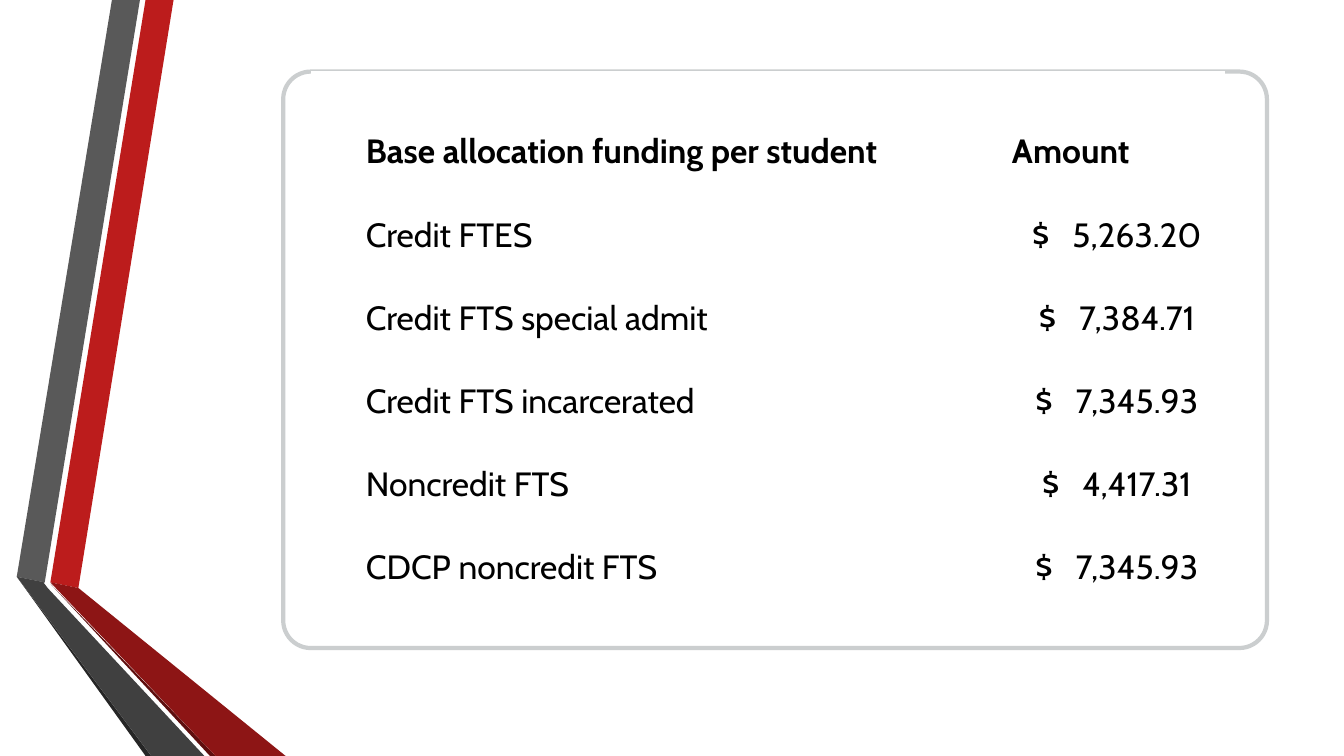
from pptx import Presentation
from pptx.dml.color import RGBColor
from pptx.enum.shapes import MSO_SHAPE
from pptx.enum.text import MSO_ANCHOR, PP_ALIGN
from pptx.util import Pt

ROUND = MSO_SHAPE.ROUNDED_RECTANGLE
BOTTOM = MSO_ANCHOR.BOTTOM
LEFT, CENTER = PP_ALIGN.LEFT, PP_ALIGN.CENTER

BLACK = RGBColor(0x00, 0x00, 0x00)
WHITE = RGBColor(0xFF, 0xFF, 0xFF)
SILVER = RGBColor(0xCB, 0xCE, 0xCF)
RED = RGBColor(0xBC, 0x1C, 0x1C)
DARK_RED = RGBColor(0x8D, 0x15, 0x15)
DEEP_RED = RGBColor(0x5E, 0x0E, 0x0E)
GRAY = RGBColor(0x59, 0x59, 0x59)
DARK_GRAY = RGBColor(0x40, 0x40, 0x40)
DEEP_GRAY = RGBColor(0x26, 0x26, 0x26)

# Content
HEAD = ("Base allocation funding per student", "Amount")
FUNDS = [
    ("Credit FTES", "5,263.20"),
    ("Credit FTS special admit", "7,384.71"),
    ("Credit FTS incarcerated", "7,345.93"),
    ("Noncredit FTS", "4,417.31"),
    ("CDCP noncredit FTS", "7,345.93"),
]

# Ribbon facets: colour and corners in points, back to front
RIBBONS = [
    (RED, [(35.8, 416.3), (55.7, 419.6), (124.5, 0), (104.5, 0)]),
    (GRAY, [(100, 0), (80, 0), (11.8, 412.3), (31.7, 415.6)]),
    (DEEP_GRAY, [(11.8, 412.3), (104.5, 540), (108.5, 540)]),
    (DEEP_RED, [(35.8, 416.6), (149.5, 540), (153.5, 540)]),
    (DARK_RED, [(35.8, 416.3), (153.5, 540), (204, 540), (55.7, 419.6)]),
    (DARK_GRAY, [(145.5, 540), (34.5, 419.5), (31.3, 416), (31.7, 415.6),
                 (11.8, 412.3), (108.5, 540)]),
]

# Layout
FRAME = (202.3, 51.1, 702.7, 411.8)
GRID = (222.5, 51.1, 652.3, 376.6)
COLS = (461.5, 190.8)
HEAD_H, ROW_H = 82.8, 55.4
INSET = {"margin_left": 38.9, "margin_top": 19.4,
         "margin_right": 2.2, "margin_bottom": 10.8}
FONT = {"name": "Cabin", "size": Pt(24)}
GAP = "1100"  # extra space after the dollar sign, in 1/100 pt


def add_run(para, text, bold):
    run = para.add_run()
    run.text = text
    for key, val in {**FONT, "bold": bold}.items():
        setattr(run.font, key, val)
    run.font.color.rgb = BLACK
    return run


deck = Presentation()
deck.slide_width, deck.slide_height = Pt(960), Pt(540)
slide = deck.slides.add_slide(deck.slide_layouts[6])
shapes = slide.shapes

# Folded ribbons on the left
for color, dots in RIBBONS:
    pen = shapes.build_freeform(*dots[0], scale=Pt(1))
    pen.add_line_segments(dots[1:], close=True)
    facet = pen.convert_to_shape()
    facet.shadow.inherit = False
    facet.fill.solid()
    facet.fill.fore_color.rgb = color
    facet.line.fill.background()

# Rounded frame
frame = shapes.add_shape(ROUND, *map(Pt, FRAME))
frame.adjustments[0] = 0.048
frame.shadow.inherit = False
frame.fill.solid()
frame.fill.fore_color.rgb = WHITE
frame.line.color.rgb = SILVER
frame.line.width = Pt(3)

# Funding table
rows = [HEAD] + FUNDS
table = shapes.add_table(len(rows), len(COLS), *map(Pt, GRID)).table
table.first_row = table.horz_banding = False
for col, width in zip(table.columns, COLS):
    col.width = Pt(width)
for r, texts in enumerate(rows):
    table.rows[r].height = Pt(ROW_H if r else HEAD_H)
    for c, text in enumerate(texts):
        cell = table.cell(r, c)
        cell.fill.solid()
        cell.fill.fore_color.rgb = WHITE
        cell.vertical_anchor = BOTTOM
        for key, val in INSET.items():
            setattr(cell, key, Pt(val))
        para = cell.text_frame.paragraphs[0]
        money = r > 0 and c == 1
        para.alignment = CENTER if money else LEFT
        if money:
            sign = add_run(para, "$", False)
            sign.font._element.set("spc", GAP)
            text = " " + text
        add_run(para, text, r == 0)

deck.save("out.pptx")
